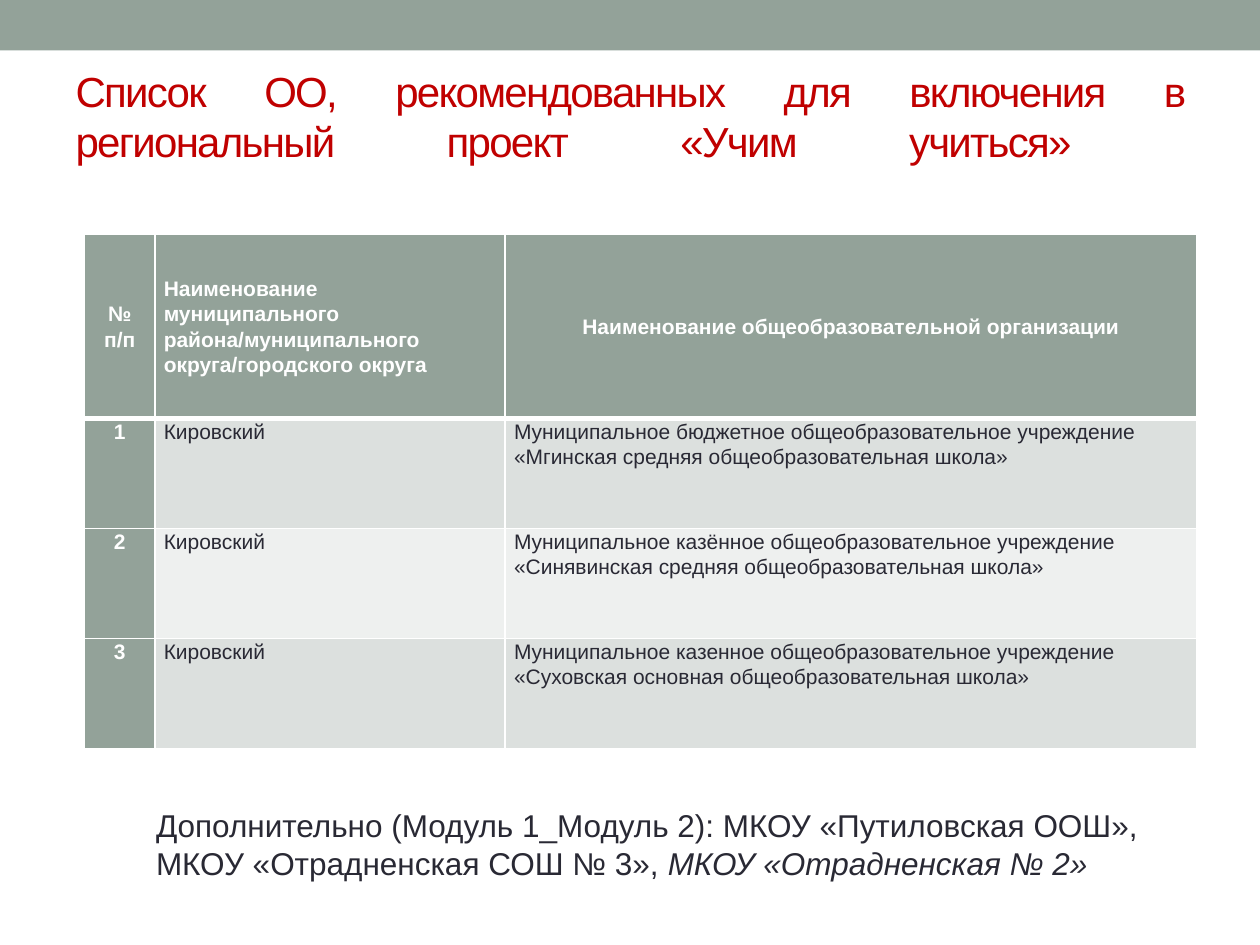
import copy
import pptx
import pptx.util
import pptx.dml.color
import pptx.enum.shapes
import pptx.enum.text
import pptx.oxml
import pptx.oxml.ns

SAGE = pptx.dml.color.RGBColor(0x93, 0xA2, 0x99)
DARK = pptx.dml.color.RGBColor(0xDC, 0xE0, 0xDE)
PALE = pptx.dml.color.RGBColor(0xEE, 0xF0, 0xEF)
WHITE = pptx.dml.color.RGBColor(0xFF, 0xFF, 0xFF)
RED = pptx.dml.color.RGBColor(0xC0, 0x00, 0x00)
INK = pptx.dml.color.RGBColor(0x29, 0x29, 0x34)
ALIGN = pptx.enum.text.PP_ALIGN
ANCHOR = pptx.enum.text.MSO_ANCHOR
FIT = pptx.enum.text.MSO_AUTO_SIZE
COLS, ROWS = 100, 75

HEADS = ["№ п/п",
         "Наименование муниципального района/муниципального округа/городского округа",
         "Наименование общеобразовательной организации"]
SCHOOLS = [
    "Муниципальное бюджетное общеобразовательное учреждение «Мгинская средняя общеобразовательная школа»",
    "Муниципальное казённое общеобразовательное учреждение «Синявинская средняя общеобразовательная школа»",
    "Муниципальное казенное общеобразовательное учреждение «Суховская основная общеобразовательная школа»",
]


def put(item, **form):
    for key, value in form.items():
        setattr(item, key, value)


class Deck:
    """Holds the style and the current slide, placed on a 100 by 75 grid."""

    def __init__(self):
        self.file = pptx.Presentation()
        put(self.file, slide_width=pptx.util.Inches(10), slide_height=pptx.util.Inches(7.5))
        self.slide = self.file.slides.add_slide(self.file.slide_layouts[5])

    def wide(self, cols):
        return round(self.file.slide_width * cols / COLS)

    def high(self, rows):
        return round(self.file.slide_height * rows / ROWS)

    def box(self, left, top, width, height):
        return self.wide(left), self.high(top), self.wide(width), self.high(height)

    def words(self, para, text, size, color, **form):
        run = para.add_run()
        run.text = text
        put(run.font, name="Arial", size=pptx.util.Pt(size), **form)
        run.font.color.rgb = color
        return run

    def bar(self, *area):
        shape = self.slide.shapes.add_shape(
            pptx.enum.shapes.MSO_SHAPE.RECTANGLE, *self.box(*area))
        shape.shadow.inherit = False
        shape.fill.solid()
        shape.fill.fore_color.rgb = SAGE
        shape.line.fill.background()

    def title(self, text, *area):
        shape = self.slide.shapes.title
        put(shape, **dict(zip(("left", "top", "width", "height"), self.box(*area))))
        put(shape.text_frame, word_wrap=True, auto_size=FIT.NONE, vertical_anchor=ANCHOR.MIDDLE)
        para = shape.text_frame.paragraphs[0]
        para.alignment = ALIGN.JUSTIFY
        style = self.words(para, text, 24, RED)._r.get_or_add_rPr()
        style.set("spc", "-100")
        para.add_line_break()
        para._p[-1].append(copy.deepcopy(style))
        last = copy.deepcopy(style)
        last.tag = pptx.oxml.ns.qn("a:endParaRPr")
        para._p.append(last)

    def edge(self, cell, base):
        props = cell._tc.get_or_add_tcPr()
        for spot, (side, width) in enumerate(zip("LRTB", (1, 1, 1, base))):
            props.insert(spot, pptx.oxml.parse_xml(
                f'<a:ln{side} {pptx.oxml.ns.nsdecls("a")} w="{pptx.util.Pt(width)}">'
                f'<a:solidFill><a:srgbClr val="{WHITE}"/></a:solidFill></a:ln{side}>'))

    def cell(self, cell, text, row, col):
        head, mark = row == 0, row == 0 or col == 0
        side = self.wide(0.7)
        put(cell, margin_left=side, margin_right=side, margin_top=0, margin_bottom=0,
            vertical_anchor=ANCHOR.MIDDLE if head else ANCHOR.TOP)
        cell.fill.solid()
        cell.fill.fore_color.rgb = SAGE if mark else (DARK if row % 2 else PALE)
        self.edge(cell, 3 if head else 1)
        para = cell.text_frame.paragraphs[0]
        center = col == 0 or (head and col == 2)
        put(para, line_spacing=1.07, space_after=pptx.util.Pt(0 if mark else 8),
            alignment=ALIGN.CENTER if center else ALIGN.LEFT)
        self.words(para, text, 12, WHITE if mark else INK, bold=mark)

    def table(self, data, widths, heights, left, top):
        area = self.box(left, top, sum(widths), sum(heights))
        grid = self.slide.shapes.add_table(len(data), len(widths), *area).table
        for col, width in zip(grid.columns, widths):
            col.width = self.wide(width)
        for row, height in zip(grid.rows, heights):
            row.height = self.high(height)
        for row, line in enumerate(data):
            for col, text in enumerate(line):
                self.cell(grid.cell(row, col), text, row, col)

    def note(self, parts, *area):
        frame = self.slide.shapes.add_textbox(*self.box(*area)).text_frame
        put(frame, word_wrap=True, auto_size=FIT.SHAPE_TO_FIT_TEXT)
        for text, slant in parts:
            self.words(frame.paragraphs[0], text, 18, INK, italic=slant)


def main():
    deck = Deck()
    deck.bar(0, 0, COLS, 4)
    deck.title("Список ОО, рекомендованных для включения в региональный проект «Учим учиться» ",
               5, 5.8, 90, 10.8)
    rows = [[str(num), "Кировский", school] for num, school in enumerate(SCHOOLS, 1)]
    deck.table([HEADS] + rows, [5.6, 27.8, 54.9], [14.6] + [8.75] * len(rows), 6.7, 18.6)
    deck.note([("Дополнительно (Модуль 1_Модуль 2): МКОУ «Путиловская ООШ», "
                "МКОУ «Отрадненская СОШ № 3», ", False),
               ("МКОУ «Отрадненская № 2»", True)], 11.4, 63.5, 80.3, 7.1)
    deck.file.save("out.pptx")


if __name__ == "__main__":
    main()
